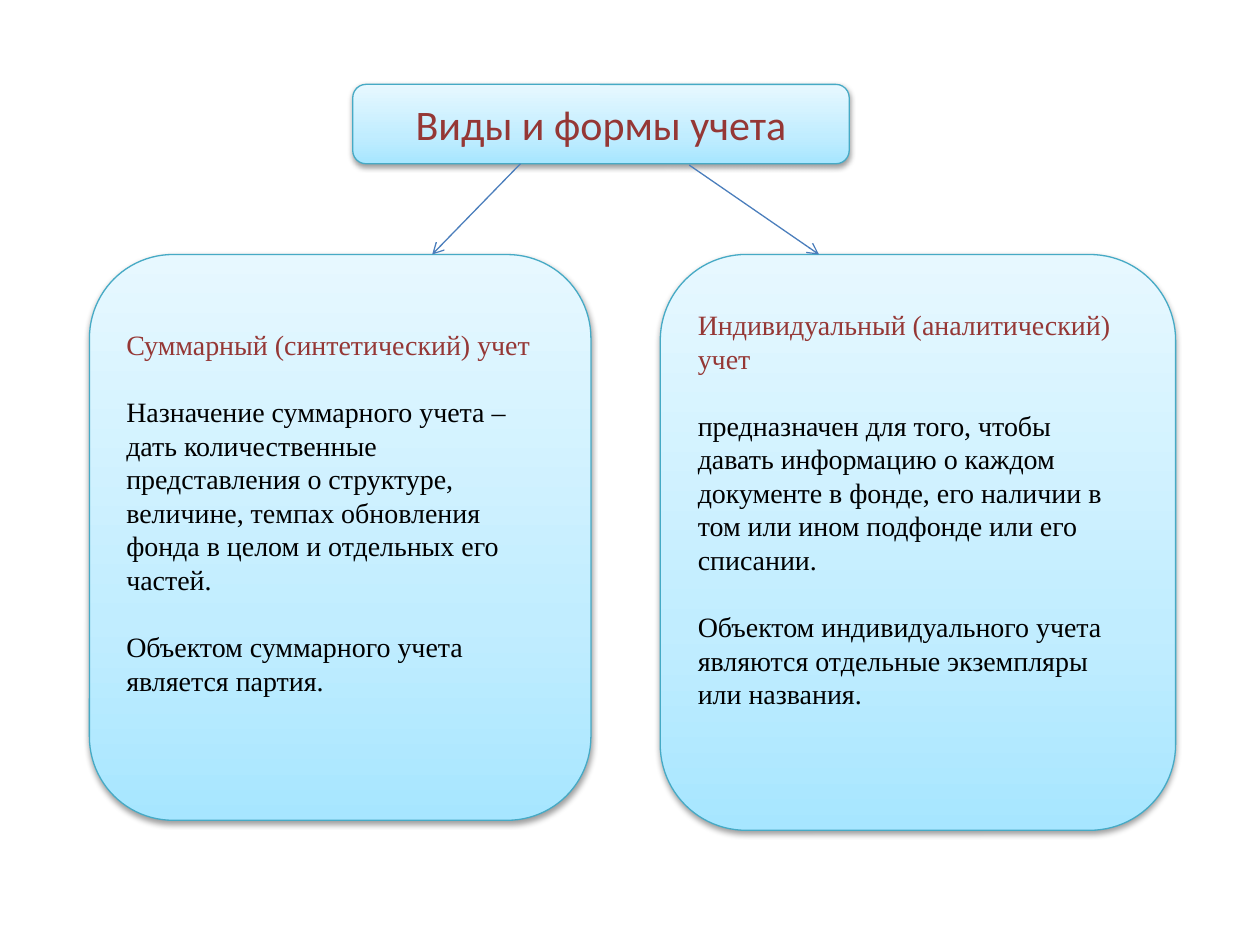
"""Builds a slide on the kinds of library stock accounting."""
from lxml import etree
from pptx import Presentation
from pptx.dml.color import RGBColor
from pptx.enum.shapes import MSO_CONNECTOR, MSO_SHAPE
from pptx.enum.text import MSO_ANCHOR, PP_ALIGN
from pptx.oxml import parse_xml
from pptx.oxml.ns import nsdecls, qn
from pptx.util import Inches, Pt

ROUNDED = MSO_SHAPE.ROUNDED_RECTANGLE
STRAIGHT = MSO_CONNECTOR.STRAIGHT
MIDDLE = MSO_ANCHOR.MIDDLE
CENTER, LEFT = PP_ALIGN.CENTER, PP_ALIGN.LEFT

MAROON = RGBColor(0x95, 0x37, 0x35)
BLACK = RGBColor(0, 0, 0)
TEAL = RGBColor(0x46, 0xAA, 0xC5)
BLUE = RGBColor(0x4B, 0x7E, 0xBC)
GRADIENT = [
    (0, RGBColor(0xA7, 0xE6, 0xFF)),
    (35, RGBColor(0xC1, 0xED, 0xFF)),
    (100, RGBColor(0xE7, 0xF8, 0xFF)),
]
LINE_PITCH = Pt(19.2)

TITLE = "Виды и формы учета"
TITLE_AT = (2.8, 0.67, 3.94, 0.63)
CARDS = [
    {
        "at": (0.71, 2.02, 3.98, 4.49),
        "bottom": 0.45,
        "groups": [
            ["Суммарный (синтетический) учет"],
            [
                "Назначение суммарного учета –",
                "дать количественные представления о структуре, величине, темпах обновления",
                "фонда в целом и отдельных его частей.",
            ],
            ["Объектом суммарного учета", "является партия."],
        ],
    },
    {
        "at": (5.24, 2.02, 4.09, 4.57),
        "bottom": 0.58,
        "groups": [
            ["Индивидуальный (аналитический)", "учет"],
            [
                "предназначен для того, чтобы",
                "давать информацию о каждом",
                "документе в фонде, его наличии в",
                "том или ином подфонде или его",
                "списании.",
            ],
            [
                "Объектом индивидуального учета",
                "являются отдельные экземпляры",
                "или названия.",
            ],
        ],
    },
]
ARROWS = [(4.13, 1.3, 3.43, 2.02), (5.47, 1.31, 6.5, 2.02)]


def add_panel(page, at):
    panel = page.shapes.add_shape(ROUNDED, *map(Inches, at))
    panel.line.color.rgb = TEAL
    panel.line.width = Pt(0.75)
    panel.shadow.inherit = False
    properties = panel.element.spPr
    stops = "".join(
        f'<a:gs pos="{place * 1000}"><a:srgbClr val="{color}"/></a:gs>'
        for place, color in GRADIENT
    )
    properties.find(qn("a:prstGeom")).addnext(parse_xml(
        f'<a:gradFill {nsdecls("a")} rotWithShape="1"><a:gsLst>{stops}</a:gsLst>'
        '<a:lin ang="16200000" scaled="0"/></a:gradFill>'
    ))
    properties.find(qn("a:effectLst")).append(parse_xml(
        f'<a:outerShdw {nsdecls("a")} blurRad="40000" dist="20000" dir="5400000" '
        'rotWithShape="0"><a:srgbClr val="000000"><a:alpha val="38000"/>'
        '</a:srgbClr></a:outerShdw>'
    ))
    frame = panel.text_frame
    frame.word_wrap = True
    frame.vertical_anchor = MIDDLE
    return frame


def style(paragraph, text, font, size, color, align):
    paragraph.text = text
    paragraph.alignment = align
    paragraph.font.name = font
    paragraph.font.size = Pt(size)
    paragraph.font.color.rgb = color


def add_card(page, card):
    frame = add_panel(page, card["at"])
    frame.margin_bottom = Inches(card["bottom"])
    paragraph = frame.paragraphs[0]
    for group_index, group in enumerate(card["groups"]):
        color = BLACK if group_index else MAROON
        for line_index, text in enumerate(group):
            if group_index or line_index:
                paragraph = frame.add_paragraph()
            style(paragraph, text, "Times New Roman", 16, color, LEFT)
            paragraph.line_spacing = LINE_PITCH
            if group_index and not line_index:
                paragraph.space_before = LINE_PITCH


def add_arrow(page, ends):
    arrow = page.shapes.add_connector(STRAIGHT, *map(Inches, ends))
    arrow.line.color.rgb = BLUE
    arrow.line.width = Pt(0.75)
    etree.SubElement(arrow.line._get_or_add_ln(), qn("a:tailEnd"), type="arrow")
    etree.SubElement(arrow.element.spPr, qn("a:effectLst"))


def main():
    deck = Presentation()
    deck.slide_width, deck.slide_height = Inches(10), Inches(7.5)
    page = deck.slides.add_slide(deck.slide_layouts[6])
    heading = add_panel(page, TITLE_AT)
    style(heading.paragraphs[0], TITLE, "Calibri", 24, MAROON, CENTER)
    for card in CARDS:
        add_card(page, card)
    for ends in ARROWS:
        add_arrow(page, ends)
    deck.save("out.pptx")


if __name__ == "__main__":
    main()
